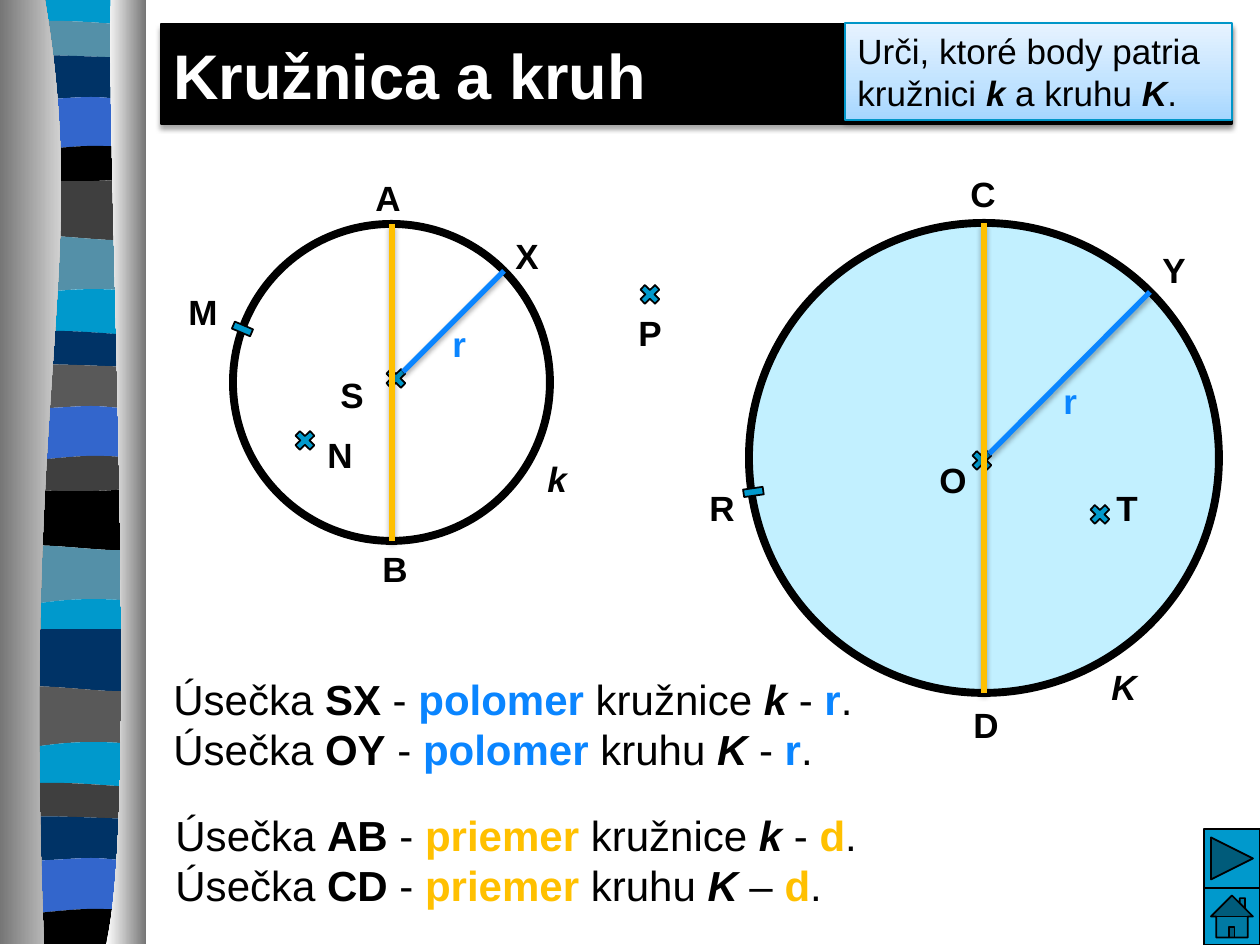
from copy import deepcopy

from lxml import etree
from pptx import Presentation
from pptx.dml.color import RGBColor
from pptx.enum.shapes import MSO_CONNECTOR, MSO_SHAPE as SHAPE
from pptx.enum.text import MSO_ANCHOR as ANCHOR, PP_ALIGN as ALIGN
from pptx.oxml.ns import qn
from pptx.util import Pt

PX = 914400 // 126
BLACK = RGBColor(0x00, 0x00, 0x00)
WHITE = RGBColor(0xFF, 0xFF, 0xFF)
CYAN = RGBColor(0x00, 0x99, 0xCC)
TEAL = RGBColor(0x54, 0x90, 0xA8)
NAVY = RGBColor(0x00, 0x33, 0x66)
BLUE = RGBColor(0x33, 0x66, 0xCC)
DARK_GRAY = RGBColor(0x3F, 0x3F, 0x3F)
MID_GRAY = RGBColor(0x59, 0x59, 0x59)
PIPE_GRAY = RGBColor(0x76, 0x76, 0x76)
DISC = RGBColor(0xC2, 0xF0, 0xFF)
RADIUS = RGBColor(0x0A, 0x85, 0xFF)
DIAMETER = RGBColor(0xFF, 0xC0, 0x00)
BOX_LINE = RGBColor(0x00, 0x96, 0xC8)
BOX_STOPS = [(0, RGBColor(0xA5, 0xD6, 0xFF)), (0.35, RGBColor(0xBF, 0xE2, 0xFF)),
             (1, RGBColor(0xE7, 0xF3, 0xFF))]


def outline(shape, color, width, shadow=False):
    """Set the line, then an effect list that is empty or holds a soft drop shadow."""
    if color is None:
        shape.line.fill.background()
    else:
        shape.line.color.rgb = color
        shape.line.width = Pt(width)
    effects = etree.SubElement(shape._element.spPr, qn("a:effectLst"))
    if shadow:
        drop = etree.SubElement(effects, qn("a:outerShdw"), blurRad="39370", dist="22860",
                                dir="5400000", rotWithShape="0")
        tint = etree.SubElement(drop, qn("a:srgbClr"), val="000000")
        etree.SubElement(tint, qn("a:alpha"), val="35000")


def write(paragraph, size, runs):
    """Add (text, style, color) runs; style holds b for bold and i for italic."""
    paragraph.alignment = ALIGN.LEFT
    for text, style, color in runs:
        run = paragraph.add_run()
        run.text = text
        run.font.name = "Arial"
        run.font.size = Pt(size)
        run.font.bold = "b" in style
        run.font.italic = "i" in style
        run.font.color.rgb = color


presentation = Presentation()
presentation.slide_width = 1260 * PX
presentation.slide_height = 945 * PX
slide = presentation.slides.add_slide(presentation.slide_layouts[6])
shapes = slide.shapes

# Wavy bands: control points of each edge, with y relative to the edge's height
FLAT = [(6, 0), (144, 0)]
CREST = [(6, 0), (15, -6), (37, -5), (59, -5), (82, -5), (126, -1), (144, 0)]
SWELL = [(6, 0), (26, -6), (100, 0), (144, 0)]
DOUBLE = [(6, 0), (21, 6), (68, 0), (91, 0), (113, 0), (135, 6), (144, 0)]
ARCH = [(6, 0), (28, 0), (68, -6), (91, -6), (113, -6), (122, -6), (144, 0)]
SAG = [(6, 0), (30, 7), (121, 7), (144, 0)]
WAVE = [(6, 0), (49, -7), (121, 10), (144, 0)]
RIPPLE = [(6, 0), (30, 10), (49, -10), (144, 0)]
bands = [
    (0, FLAT, CYAN), (26, CREST, TEAL), (58, SWELL, NAVY), (97, DOUBLE, BLUE),
    (152, ARCH, BLACK), (176, SAG, DARK_GRAY), (237, WAVE, TEAL), (292, RIPPLE, CYAN),
    (336, CREST, NAVY), (367, SWELL, MID_GRAY), (406, DOUBLE, BLUE),
    (462, ARCH, DARK_GRAY), (486, SAG, BLACK), (547, WAVE, TEAL), (602, RIPPLE, CYAN),
    (629, FLAT, NAVY), (688, WAVE, MID_GRAY), (745, RIPPLE, CYAN),
    (788, CREST, DARK_GRAY), (819, SWELL, NAVY), (858, DOUBLE, BLUE), (915, ARCH, BLACK),
    (944, FLAT, None),
]
edges = [[(x, top + y) for x, y in edge] for top, edge, _ in bands]
pieces = [(upper, lower[::-1], [color]) for upper, lower, (_, _, color)
          in zip(edges, edges[1:], bands)]
pieces += [
    ([(45, 0), (91, 272), (21, 373), (44, 944)], [(0, 944), (0, 0)], [PIPE_GRAY, WHITE]),
    ([(111, 0), (106, 158), (140, 814), (106, 944)], [(146, 944), (146, 0)],
     [WHITE, PIPE_GRAY]),
]
for first, second, colors in pieces:
    builder = shapes.build_freeform(*first[0], scale=PX)
    builder.add_line_segments(first[1:] + second, close=True)
    shape = builder.convert_to_shape()
    # Every three segments after the start of a curved side become one Bézier curve
    segments = list(shape._element.spPr.iter(qn("a:lnTo")))
    for side in (segments[:len(first) - 1], segments[len(first):]):
        for start in range(0, len(side) - 2, 3):
            curve = etree.Element(qn("a:cubicBezTo"))
            side[start].addprevious(curve)
            for segment in side[start:start + 3]:
                curve.append(segment[0])
                segment.getparent().remove(segment)
    if len(colors) == 1:
        shape.fill.solid()
        shape.fill.fore_color.rgb = colors[0]
    else:
        shape.fill.gradient()
        shape.fill.gradient_angle = 0
        for stop, color in zip(shape.fill.gradient_stops, colors):
            stop.color.rgb = color
    outline(shape, None, 0)

# Title bar
title = shapes.add_shape(SHAPE.RECTANGLE, 161 * PX, 24 * PX, 1071 * PX, 100 * PX)
title.fill.solid()
title.fill.fore_color.rgb = BLACK
outline(title, BLACK, 0.75, shadow=True)
title.text_frame.vertical_anchor = ANCHOR.MIDDLE
write(title.text_frame.paragraphs[0], 36, [("Kružnica a kruh", "b", WHITE)])

# Circle, disc, point marks and navigation buttons
CROSS, DASH = SHAPE.MATH_MULTIPLY, SHAPE.MATH_MINUS
figures = [(SHAPE.OVAL, 233, 224, 317, 317, 0, None, 4.5),
           (SHAPE.OVAL, 749, 223, 470, 470, 0, DISC, 4.5)]
figures += [(CROSS, x, y, 28, 27, 0, CYAN, 1) for x, y in
            [(382, 365), (968, 447), (636, 281), (1086, 501), (291, 427)]]
figures += [(DASH, 229, 313, 27, 32, 23, CYAN, 1), (DASH, 740, 476, 27, 32, 352, CYAN, 1),
            (SHAPE.ACTION_BUTTON_HOME, 1204, 888, 56, 57, 0, CYAN, 1),
            (SHAPE.ACTION_BUTTON_FORWARD_OR_NEXT, 1204, 829, 56, 59, 0, CYAN, 1)]
for kind, x, y, width, height, rotation, color, weight in figures:
    shape = shapes.add_shape(kind, x * PX, y * PX, width * PX, height * PX)
    shape.rotation = rotation
    if color is None:
        shape.fill.background()
    else:
        shape.fill.solid()
        shape.fill.fore_color.rgb = color
    outline(shape, BLACK, weight)

# Radii and diameters
for x1, y1, x2, y2, color in [(403, 372, 504, 271, RADIUS), (989, 454, 1150, 292, RADIUS),
                              (392, 224, 392, 541, DIAMETER), (984, 223, 984, 693, DIAMETER)]:
    line = shapes.add_connector(MSO_CONNECTOR.STRAIGHT, x1 * PX, y1 * PX, x2 * PX, y2 * PX)
    outline(line, color, 3, shadow=True)

# Letters
letters = [("S", 328, 367), ("X", 503, 228), ("O", 927, 452), ("Y", 1150, 242),
           ("A", 363, 170), ("B", 370, 541), ("C", 958, 166), ("D", 961, 697),
           ("M", 176, 284), ("N", 315, 427), ("P", 626, 305), ("R", 697, 480),
           ("T", 1104, 480), ("k", 535, 451), ("K", 1099, 659), ("r", 440, 316),
           ("r", 1051, 373)]
for letter, x, y in letters:
    label = shapes.add_textbox(x * PX, y * PX, 47 * PX, 55 * PX)
    label.text_frame.word_wrap = True
    write(label.text_frame.paragraphs[0], 20,
          [(letter, "bi" if letter in "kK" else "b", RADIUS if letter == "r" else BLACK)])

# Sentences
sentences = [
    (161, 667, 736, "polomer ", "r", RADIUS,
     [("SX", "kružnice ", "k", " - "), ("OY", "kruhu ", "K", " - ")]),
    (163, 803, 741, "priemer ", "d", DIAMETER,
     [("AB", "kružnice ", "k", " - "), ("CD", "kruhu ", "K", " – ")]),
]
for x, y, width, term, symbol, color, lines in sentences:
    frame = shapes.add_textbox(x * PX, y * PX, width * PX, 115 * PX).text_frame
    frame.word_wrap = True
    for index, (segment, figure, name, dash) in enumerate(lines):
        paragraph = frame.add_paragraph() if index else frame.paragraphs[0]
        write(paragraph, 24, [
            ("Úsečka ", "", BLACK), (segment, "b", BLACK), (" - ", "", BLACK),
            (term, "b", color), (figure, "", BLACK), (name, "bi", BLACK),
            (dash, "", BLACK), (symbol, "b", color), (".", "", BLACK)])

# Task box
task = shapes.add_shape(SHAPE.RECTANGLE, 845 * PX, 23 * PX, 387 * PX, 97 * PX)
task.fill.gradient()
task.fill.gradient_angle = 90
stop_list = task._element.spPr.find(qn("a:gradFill")).find(qn("a:gsLst"))
stop_list.insert(1, deepcopy(stop_list[0]))
for stop, (position, color) in zip(task.fill.gradient_stops, BOX_STOPS):
    stop.position = position
    stop.color.rgb = color
outline(task, BOX_LINE, 0.75, shadow=True)
task.text_frame.word_wrap = True
task.text_frame.vertical_anchor = ANCHOR.TOP
write(task.text_frame.paragraphs[0], 20, [
    ("Urči, ktoré body patria kružnici ", "", BLACK), ("k", "bi", BLACK),
    (" a kruhu ", "", BLACK), ("K", "bi", BLACK), (".", "", BLACK)])

presentation.save("out.pptx")
